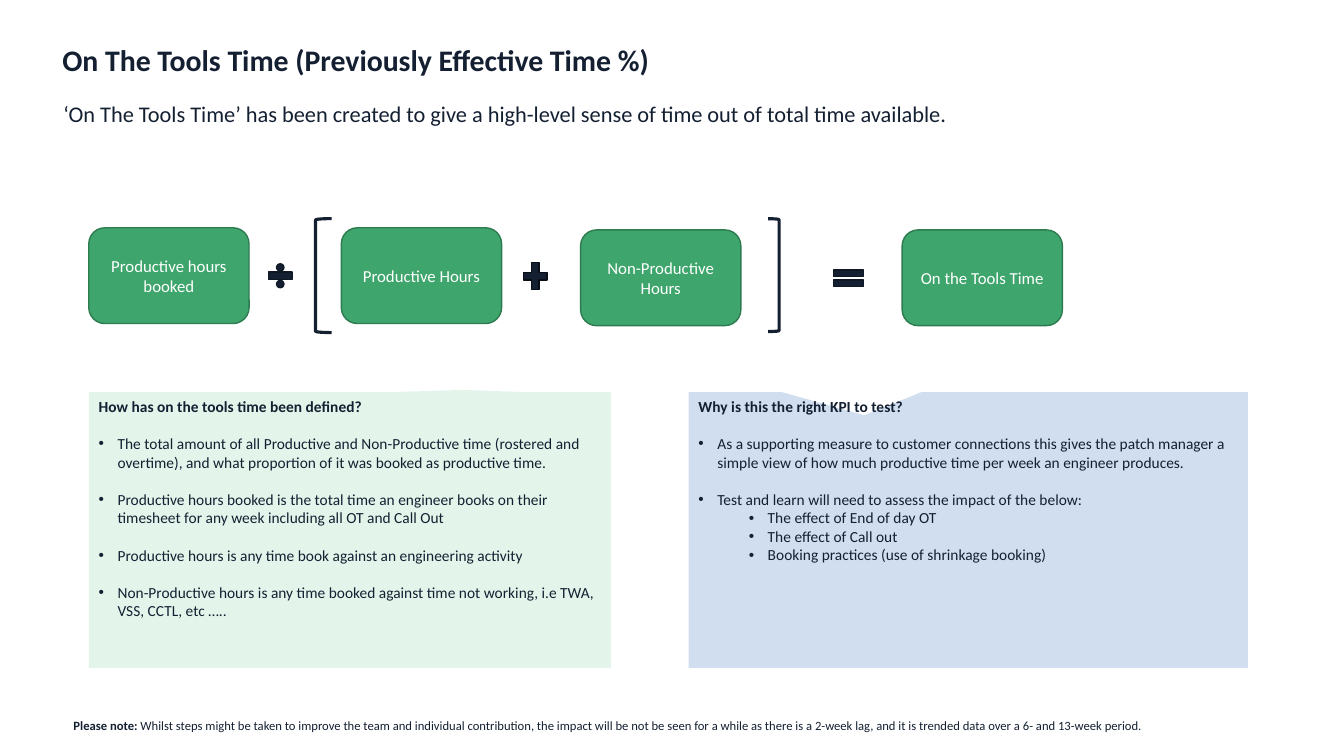
from dataclasses import dataclass

from lxml import etree
from pptx import Presentation
from pptx.dml.color import RGBColor
from pptx.enum.shapes import MSO_SHAPE
from pptx.enum.text import MSO_ANCHOR, MSO_AUTO_SIZE, PP_ALIGN
from pptx.oxml.ns import qn
from pptx.util import Pt

ROUNDED = MSO_SHAPE.ROUNDED_RECTANGLE
CALLOUT = MSO_SHAPE.RECTANGULAR_CALLOUT
BRACKET = MSO_SHAPE.LEFT_BRACKET
DIVIDE, PLUS, EQUAL = MSO_SHAPE.MATH_DIVIDE, MSO_SHAPE.MATH_PLUS, MSO_SHAPE.MATH_EQUAL
LEFT, CENTER = PP_ALIGN.LEFT, PP_ALIGN.CENTER
TOP, MIDDLE, BOTTOM = MSO_ANCHOR.TOP, MSO_ANCHOR.MIDDLE, MSO_ANCHOR.BOTTOM
NO_AUTOFIT = MSO_AUTO_SIZE.NONE

NAVY = RGBColor(0x14, 0x20, 0x32)
NAVY_EDGE = RGBColor(0x0F, 0x18, 0x25)
PLUS_EDGE = RGBColor(0x09, 0x0E, 0x16)
GREEN = RGBColor(0x3E, 0xA6, 0x6C)
GREEN_EDGE = RGBColor(0x2E, 0x7B, 0x50)
MINT = RGBColor(0xD6, 0xF0, 0xE1)
SKY = RGBColor(0xBB, 0xCF, 0xE9)
WHITE = RGBColor(0xFF, 0xFF, 0xFF)

FONT = "Calibri"
CARD_WIDTH, CARD_HEIGHT = 114.5, 68.4
PANEL_TOP, PANEL_HEIGHT, PANEL_OPACITY = 280.1, 197, 68
BULLET_HANG, LEVEL_STEP = 13.5, 36
BLANK_LINE = 13.4


@dataclass(frozen=True)
class Card:
    text: str
    left: float
    top: float


@dataclass(frozen=True)
class Operator:
    kind: int
    left: float
    top: float
    width: float
    height: float
    edge: RGBColor = NAVY_EDGE


@dataclass(frozen=True)
class Bracket:
    left: float
    top: float
    width: float
    height: float
    rotation: int


@dataclass(frozen=True)
class Bullet:
    text: str
    level: int = 0


@dataclass(frozen=True)
class Panel:
    heading: str
    left: float
    width: float
    colour: RGBColor
    pointer: tuple[float, float]
    bullets: tuple[Bullet, ...]


CARDS = (
    Card("Productive hours booked", 63.4, 162.7),
    Card("Productive Hours", 243.8, 162.7),
    Card("Non-Productive Hours", 414.7, 164.2),
    Card("On the Tools Time", 644.4, 164.2),
)
OPERATORS = (
    Operator(DIVIDE, 188.7, 185.8, 23, 22.3),
    Operator(PLUS, 370.8, 184.3, 23, 25.9, PLUS_EDGE),
    Operator(EQUAL, 591.8, 188.6, 28.8, 20.2),
)
BRACKETS = (
    Bracket(225.4, 156.2, 11.5, 81.4, 0),
    Bracket(548.6, 156.2, 7.9, 80.6, 180),
)
PANELS = (
    Panel("How has on the tools time been defined?", 63.4, 373, MINT, (0.217, -0.508), (
        Bullet("The total amount of all Productive and Non-Productive time (rostered and "
               "overtime), and what proportion of it was booked as productive time."),
        Bullet("Productive hours booked is the total time an engineer books on their "
               "timesheet for any week including all OT and Call Out"),
        Bullet("Productive hours is any time book against an engineering activity"),
        Bullet("Non-Productive hours is any time booked against time not working, "
               "i.e TWA, VSS, CCTL, etc ….."),
    )),
    Panel("Why is this the right KPI to test?", 491.8, 399.6, SKY, (-0.186, -0.416), (
        Bullet("As a supporting measure to customer connections this gives the patch manager "
               "a simple view of how much productive time per week an engineer produces."),
        Bullet("Test and learn will need to assess the impact of the below:"),
        Bullet("The effect of End of day OT", 1),
        Bullet("The effect of Call out", 1),
        Bullet("Booking practices (use of shrinkage booking)", 1),
    )),
)


def style(para, size: float, colour: RGBColor = NAVY, bold: bool | None = None,
          align: int = LEFT) -> None:
    para.alignment = align
    font = para.font
    font.name, font.size, font.bold = FONT, Pt(size), bold
    font.color.rgb = colour


def place(shape, left: float, top: float, width: float, height: float) -> None:
    shape.left, shape.top, shape.width, shape.height = map(Pt, (left, top, width, height))


def add_plain_shape(page, kind: int, left: float, top: float, width: float, height: float,
                    fill: RGBColor | None, edge: RGBColor | None, weight: float = 1):
    """Add a shape without shadow; None means no fill or no line."""
    shape = page.shapes.add_shape(kind, *map(Pt, (left, top, width, height)))
    shape.shadow.inherit = False
    if fill is None:
        shape.fill.background()
    else:
        shape.fill.solid()
        shape.fill.fore_color.rgb = fill
    if edge is None:
        shape.line.fill.background()
    else:
        shape.line.color.rgb = edge
        shape.line.width = Pt(weight)
    return shape


def add_title(page) -> None:
    title = page.shapes.title
    place(title, 37.4, 35.3, 680.4, 23.8)
    frame = title.text_frame
    frame.text = "On The Tools Time (Previously Effective Time %)"
    frame.auto_size, frame.vertical_anchor = NO_AUTOFIT, BOTTOM
    frame.paragraphs[0].line_spacing = 0.9
    style(frame.paragraphs[0], 21.3, bold=True)


def add_text(page, left: float, top: float, width: float, height: float, size: float,
             text: str, lead: str = "") -> None:
    """Add one paragraph of text, after an optional bold lead-in."""
    frame = page.shapes.add_textbox(*map(Pt, (left, top, width, height))).text_frame
    frame.word_wrap = True
    para = frame.paragraphs[0]
    if lead:
        span = para.add_run()
        span.text, span.font.bold = lead, True
    para.add_run().text = text
    style(para, size)


def add_card(page, card: Card) -> None:
    box = add_plain_shape(page, ROUNDED, card.left, card.top, CARD_WIDTH, CARD_HEIGHT,
                          GREEN, GREEN_EDGE)
    frame = box.text_frame
    frame.word_wrap, frame.vertical_anchor = True, MIDDLE
    frame.text = card.text
    style(frame.paragraphs[0], 12, WHITE, align=CENTER)


def add_bullet(frame, bullet: Bullet) -> None:
    para = frame.add_paragraph()
    para.text, para.level = bullet.text, bullet.level
    para.space_before = Pt(0 if bullet.level else BLANK_LINE)
    properties = para._p.get_or_add_pPr()
    properties.set("marL", str(Pt(BULLET_HANG + LEVEL_STEP * bullet.level)))
    properties.set("indent", str(-Pt(BULLET_HANG)))
    etree.SubElement(properties, qn("a:buFont")).set("typeface", "Arial")
    etree.SubElement(properties, qn("a:buChar")).set("char", "•")
    style(para, 11)


def add_panel(page, panel: Panel) -> None:
    box = add_plain_shape(page, CALLOUT, panel.left, PANEL_TOP, panel.width, PANEL_HEIGHT,
                          panel.colour, None)
    box.adjustments[0], box.adjustments[1] = panel.pointer
    colour = box.fill._xPr.find(qn("a:solidFill"))[0]
    etree.SubElement(colour, qn("a:alpha")).set("val", str(PANEL_OPACITY * 1000))
    frame = box.text_frame
    frame.word_wrap, frame.vertical_anchor = True, TOP
    frame.text = panel.heading
    style(frame.paragraphs[0], 11, bold=True)
    for bullet in panel.bullets:
        add_bullet(frame, bullet)


def main() -> None:
    deck = Presentation()
    deck.slide_width, deck.slide_height = Pt(960), Pt(540)
    page = deck.slides.add_slide(deck.slide_layouts[5])
    add_title(page)
    add_text(page, 38.2, 67.7, 897, 26.6, 16, "‘On The Tools Time’ has been created to give "
             "a high-level sense of time out of total time available.")
    for card in CARDS:
        add_card(page, card)
    for sign in OPERATORS:
        add_plain_shape(page, sign.kind, sign.left, sign.top, sign.width, sign.height,
                        NAVY, sign.edge)
    for bracket in BRACKETS:
        shape = add_plain_shape(page, BRACKET, bracket.left, bracket.top, bracket.width,
                                bracket.height, None, NAVY, 2.25)
        shape.rotation = bracket.rotation
    for panel in PANELS:
        add_panel(page, panel)
    add_text(page, 45.4, 509, 877.7, 18, 9, "Whilst steps might be taken to improve the team "
             "and individual contribution, the impact will be not be seen for a while as there "
             "is a 2-week lag, and it is trended data over a 6- and 13-week period.",
             lead="Please note: ")
    deck.save("out.pptx")


if __name__ == "__main__":
    main()
